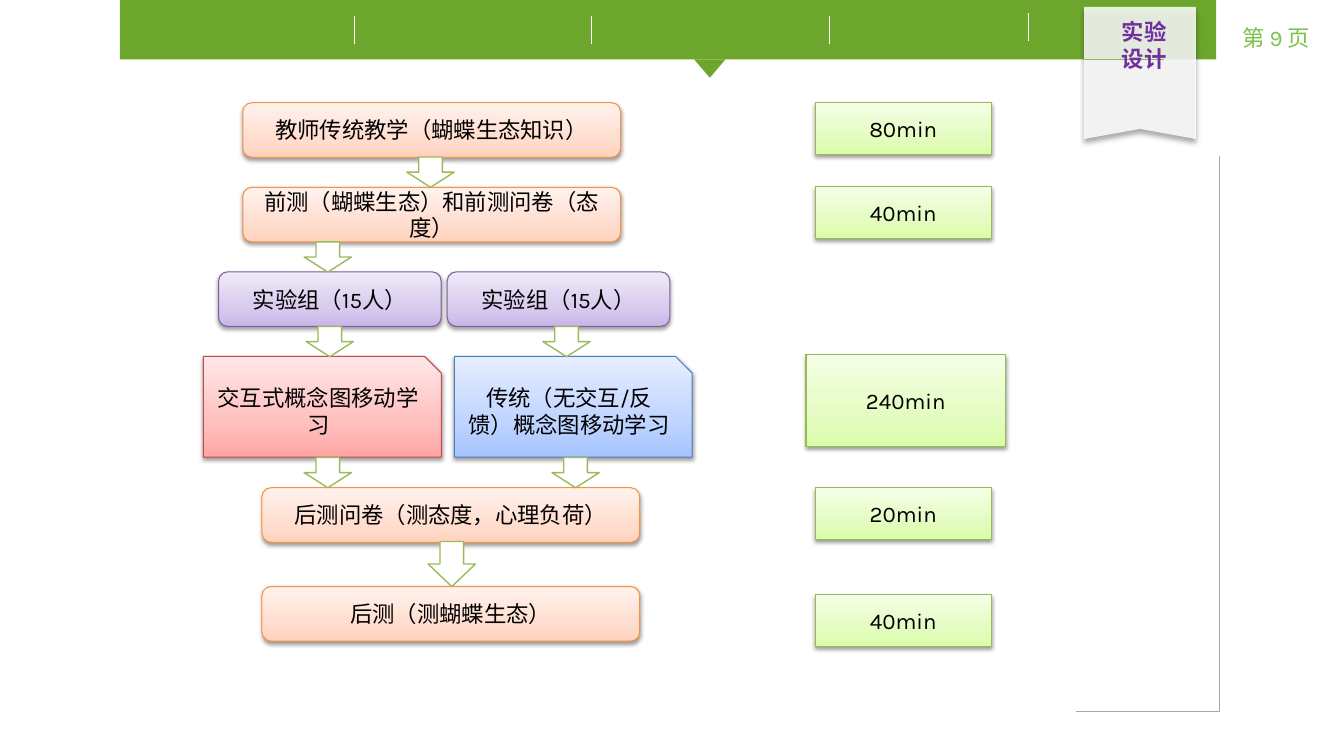
from pptx import Presentation
from pptx.dml.color import RGBColor
from pptx.enum.shapes import MSO_CONNECTOR, MSO_SHAPE
from pptx.enum.text import MSO_ANCHOR, PP_ALIGN
from pptx.oxml import parse_xml
from pptx.oxml.ns import nsdecls, qn
from pptx.util import Pt
from lxml import etree

RECT, ROUND, SNIP = MSO_SHAPE.RECTANGLE, MSO_SHAPE.ROUNDED_RECTANGLE, MSO_SHAPE.SNIP_1_RECTANGLE
DOWN, TRIANGLE = MSO_SHAPE.DOWN_ARROW, MSO_SHAPE.ISOSCELES_TRIANGLE
STRAIGHT = MSO_CONNECTOR.STRAIGHT
CENTER = PP_ALIGN.CENTER
TOP, MIDDLE = MSO_ANCHOR.TOP, MSO_ANCHOR.MIDDLE

LATIN, CJK = "Karla", "Noto Sans CJK SC"
COLORS = {
    "white": "FFFFFF", "black": "000000", "bar": "6CA62C", "page": "7BC14A",
    "title": "7030A0", "frame": "A6A6A6", "arrow": "9BBB59",
}
GRADIENTS = {
    "orange": ("FFD2BD", "FFDED0", "FFF2ED", "F69240"),
    "purple": ("C9B5E8", "D8CBEE", "F0EAF9", "7D60A0"),
    "red": ("FFA6A5", "FFC0BF", "FFE7E7", "BF4C48"),
    "blue": ("A4C4FF", "BFD4FF", "E6EEFF", "4B7EBC"),
    "green": ("DAFDA7", "E4FCC2", "F5FFE7", "98B955"),
}


def rgb(name):
    return RGBColor.from_string(COLORS.get(name, name))


def add_run(p, text, color, latin=LATIN, bold=False):
    r = p.add_run()
    r.text = text
    r.font.size = Pt(16)
    r.font.bold = bold
    r.font.color.rgb = rgb(color)
    r.font.name = latin
    ea = etree.SubElement(r.font._element, qn("a:ea"))
    ea.set("typeface", CJK)


def add_line(s, x1, y1, x2, y2, color):
    line = s.shapes.add_connector(STRAIGHT, Pt(x1), Pt(y1), Pt(x2), Pt(y2))
    line.line.color.rgb = rgb(color)
    line.line.width = Pt(0.75)
    etree.SubElement(line._element.spPr, qn("a:effectLst"))


def add_solid(s, kind, x, y, w, h, fill, line=None):
    sp = s.shapes.add_shape(kind, Pt(x), Pt(y), Pt(w), Pt(h))
    sp.shadow.inherit = False
    sp.fill.solid()
    sp.fill.fore_color.rgb = rgb(fill)
    if line:
        sp.line.color.rgb = rgb(line)
        sp.line.width = Pt(1)
    else:
        sp.line.fill.background()
    return sp


def add_shadow(sp, blur, dist, alpha):
    sp.shadow.inherit = False
    effects = sp._element.spPr.find(qn("a:effectLst"))
    effects.append(parse_xml(
        f'<a:outerShdw {nsdecls("a")} blurRad="{Pt(blur)}" dist="{Pt(dist)}" dir="5400000" '
        f'rotWithShape="0"><a:srgbClr val="{COLORS["black"]}"><a:alpha val="{alpha * 1000}"/>'
        '</a:srgbClr></a:outerShdw>'))


def add_card(s, kind, x, y, w, h, scheme, text):
    *stops, edge = GRADIENTS[scheme]
    sp = s.shapes.add_shape(kind, Pt(x), Pt(y), Pt(w), Pt(h))
    sp.fill.gradient()
    grad = sp._element.spPr.find(qn("a:gradFill"))
    gs = "".join(f'<a:gs pos="{pos * 1000}"><a:srgbClr val="{c}"/></a:gs>'
                 for pos, c in zip((0, 35, 100), stops))
    grad.getparent().replace(grad, parse_xml(
        f'<a:gradFill {nsdecls("a")} rotWithShape="1"><a:gsLst>{gs}</a:gsLst>'
        '<a:lin ang="16200000" scaled="0"/></a:gradFill>'))
    sp.line.color.rgb = rgb(edge)
    sp.line.width = Pt(0.75)
    add_shadow(sp, 3.1, 1.6, 38)
    tf = sp.text_frame
    tf.word_wrap = True
    tf.vertical_anchor = MIDDLE
    p = tf.paragraphs[0]
    p.alignment = CENTER
    add_run(p, text, "black")


def add_banner(s, x, y, w, h):
    add_solid(s, RECT, x, y, w, h, "bar")
    add_solid(s, TRIANGLE, x + 410.4, y + h, 22.3, 13, "bar").rotation = 180
    for i in range(3):
        sep = x + 167.7 + 169.6 * i
        add_line(s, sep, y + 11.5, sep, y + 31.7, "white")
    add_line(s, x + 649.4, y + 9.4, x + 649.4, y + 29.5, "white")


def add_page_number(s, x, y, w, h):
    tf = s.shapes.add_textbox(Pt(x), Pt(y), Pt(w), Pt(h)).text_frame
    tf.word_wrap = True
    p = tf.paragraphs[0]
    p.alignment = CENTER
    for text, font in (("第 ", CJK), ("9 ", LATIN), ("页", CJK)):
        add_run(p, text, "page", font)


def add_ribbon_title(s, x, y, w, h):
    fb = s.shapes.build_freeform(Pt(x), Pt(y + h))
    fb.add_line_segments([(Pt(a), Pt(b)) for a, b in (
        (x, y), (x + w, y), (x + w, y + h), (x + w / 2, y + h - 7.2))])
    ribbon = fb.convert_to_shape()
    ribbon.fill.solid()
    ribbon.fill.fore_color.rgb = rgb("white")
    clr = ribbon._element.spPr.find(qn("a:solidFill"))[0]
    etree.SubElement(clr, qn("a:alpha")).set("val", "85000")
    ribbon.line.fill.background()
    add_shadow(ribbon, 4, 3, 40)
    add_line(s, x, y + 37.5, x + 56.9, y + 37.5, "page")

    title = s.shapes.title
    title.left, title.top, title.width, title.height = Pt(x + 16.6), Pt(y + 4.4), Pt(52.6), Pt(46)
    s.shapes._spTree.append(title._element)
    tf = title.text_frame
    tf.word_wrap = True
    tf.vertical_anchor = TOP
    p = tf.paragraphs[0]
    p.alignment = CENTER
    add_run(p, "实验设计", "title", CJK, True)


def add_frame(s, x, y, w, h):
    add_line(s, x + w, y, x + w, y + h, "frame")
    add_line(s, x, y + h, x + w, y + h, "frame")


def add_flow(s, x, y, step):
    for kind, dx, dy, w, h, scheme, text in (
        (ROUND, 28.1, 0, 270, 39, "orange", "教师传统教学（蝴蝶生态知识）"),
        (ROUND, 28.1, step, 270, 39, "orange", "前测（蝴蝶生态）和前测问卷（态度）"),
        (ROUND, 10.8, 2 * step, 159.1, 39, "purple", "实验组（15人）"),
        (ROUND, 174.2, 2 * step, 159.1, 39, "purple", "实验组（15人）"),
        (SNIP, 0, 3 * step, 170, 72, "red", "交互式概念图移动学习"),
        (SNIP, 179.3, 3 * step, 170, 72, "blue", "传统（无交互/反馈）概念图移动学习"),
        (ROUND, 41.8, 275, 270, 39, "orange", "后测问卷（测态度，心理负荷）"),
        (ROUND, 41.8, 345.6, 270, 39, "orange", "后测（测蝴蝶生态）"),
    ):
        add_card(s, kind, x + dx, y + dy, w, h, scheme, text)
    for dx, dy, h in (
        (145.4, 38.8, 21.6), (72, 99.4, 21.6), (73.4, 159.8, 21.6), (242.6, 159.8, 21.6),
        (249.1, 253.4, 21.6), (72, 253.4, 21.6), (160.6, 313.4, 32.2),
    ):
        add_solid(s, DOWN, x + dx, y + dy, 33.8, h, "white", "arrow")


def add_durations(s, x, y):
    for dx, dy, w, h, text in (
        (6.5, 0, 126, 36.7, "80min"), (6.5, 60, 126, 36.7, "40min"),
        (0, 180, 142.6, 65.5, "240min"),
        (6.5, 275, 126, 36.7, "20min"), (6.5, 351.4, 126, 36.7, "40min"),
    ):
        add_card(s, RECT, x + dx, y + dy, w, h, "green", text)


def main():
    prs = Presentation()
    prs.slide_width, prs.slide_height = Pt(960.48), Pt(540)
    s = prs.slides.add_slide(prs.slide_layouts[5])
    add_banner(s, 85.7, 0, 783.4, 42.5)
    add_page_number(s, 869, 13.7, 86.4, 28.8)
    add_ribbon_title(s, 774.7, 5, 79.9, 94.3)
    add_frame(s, 769, 111.6, 102.2, 396.7)
    add_flow(s, 145.4, 73.4, 60.4)
    add_durations(s, 576, 73.4)
    prs.save("out.pptx")


if __name__ == "__main__":
    main()
